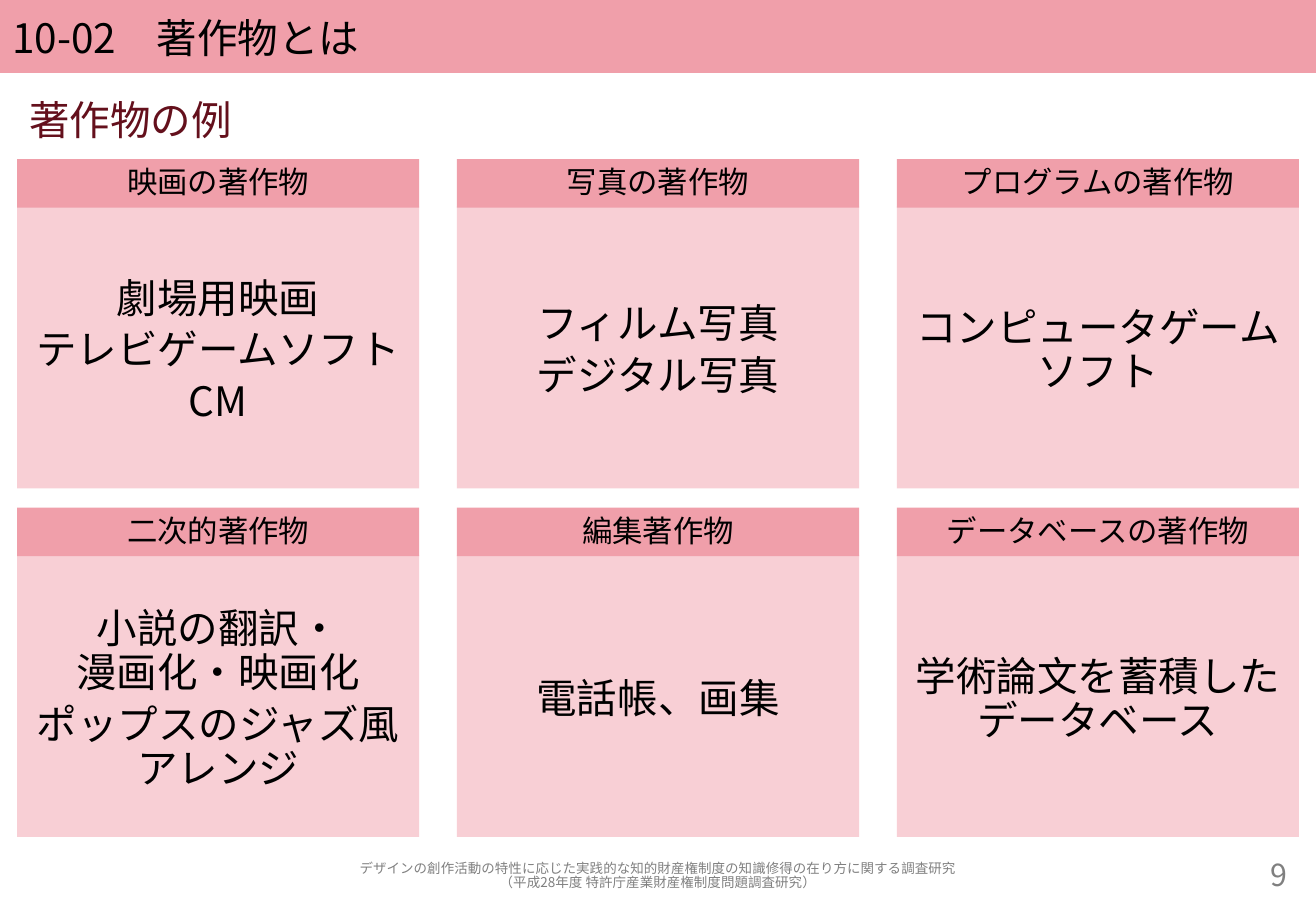
from lxml import etree
from pptx import Presentation
from pptx.dml.color import RGBColor
from pptx.enum.shapes import MSO_SHAPE
from pptx.enum.text import MSO_ANCHOR, MSO_AUTO_SIZE, PP_ALIGN
from pptx.oxml.ns import qn
from pptx.util import Inches, Pt

RECT = MSO_SHAPE.RECTANGLE
TOP, MID = MSO_ANCHOR.TOP, MSO_ANCHOR.MIDDLE
FIXED = MSO_AUTO_SIZE.NONE
LEFT, MIDST, RIGHT = PP_ALIGN.LEFT, PP_ALIGN.CENTER, PP_ALIGN.RIGHT

FONT = "Noto Sans CJK JP"
HUES = {"rose": "F09FAA", "pale": "F8CFD5", "wine": "64101C",
        "ink": "000000", "gray": "808080"}
WIDE, HIGH = 10.83, 7.5
EDGE = 0.14
SPAN = WIDE - 2 * EDGE
COLS = 3
CARD = 3.31
STEP = (SPAN - CARD) / (COLS - 1)
START, ROW = 1.31, 2.87
HEAD, BODY = 0.4, 2.32

CARDS = [
    ("映画の著作物", "劇場用映画\nテレビゲームソフト\nCM"),
    ("写真の著作物", "フィルム写真\nデジタル写真"),
    ("プログラムの著作物", "コンピュータゲームソフト"),
    ("二次的著作物", "小説の翻訳・\v漫画化・映画化\nポップスのジャズ風アレンジ"),
    ("編集著作物", "電話帳、画集"),
    ("データベースの著作物", "学術論文を蓄積したデータベース"),
]
CREDIT = ("デザインの創作活動の特性に応じた実践的な知的財産権制度の知識修得の在り方に関する調査研究\n"
          "（平成28年度 特許庁産業財産権制度問題調査研究）")


def paint(shape, hue):
    """Fill a shape with a named colour."""
    shape.fill.solid()
    shape.fill.fore_color.rgb = RGBColor.from_string(HUES[hue])


def place(shape, x, y, w, h):
    """Move and size a shape in inches."""
    shape.left, shape.top = Inches(x), Inches(y)
    shape.width, shape.height = Inches(w), Inches(h)


def write(shape, text, size, hue="ink", align=MIDST, anchor=MID, gap=0.2, inset=0.07):
    """Set the text of a shape and format its paragraphs and runs."""
    frame = shape.text_frame
    frame.text = text
    frame.word_wrap = True
    frame.auto_size = FIXED
    frame.vertical_anchor = anchor
    frame.margin_left = frame.margin_right = Inches(0.1)
    frame.margin_top, frame.margin_bottom = Inches(inset), 0
    for para in frame.paragraphs:
        para.alignment = align
        para.line_spacing = 0.9
        para.space_before = Pt(size * gap)
        for run in para.runs:
            run.font.size = Pt(size)
            run.font.name = FONT
            run.font.color.rgb = RGBColor.from_string(HUES[hue])
            east = etree.SubElement(run.font._element, qn("a:ea"))
            east.set("typeface", FONT)


def unlist(shape):
    """Remove bullets and indents from a placeholder."""
    for para in shape.text_frame.paragraphs:
        props = para._p.get_or_add_pPr()
        props.set("marL", "0")
        props.set("indent", "0")
        etree.SubElement(props, qn("a:buNone"))


def block(slide, x, y, h, hue):
    """Add a flat rectangle one card wide."""
    shape = slide.shapes.add_shape(RECT, Inches(x), Inches(y), Inches(CARD), Inches(h))
    shape.shadow.inherit = False
    shape.line.fill.background()
    paint(shape, hue)
    return shape


def card(slide, spot, head, body):
    """Add a headed card at its spot in the grid."""
    row, col = divmod(spot, COLS)
    x, y = EDGE + col * STEP, START + row * ROW
    write(block(slide, x, y + HEAD - 0.01, BODY, "pale"), body, 24)
    write(block(slide, x, y, HEAD, "rose"), head, 18, anchor=TOP)


def note(slide, x, w, text, size, align):
    """Add a gray text box in the footer row."""
    box = slide.shapes.add_textbox(Inches(x), Inches(7.06), Inches(w), Inches(0.31))
    write(box, text, size, "gray", align, gap=0, inset=0)


def main():
    """Build and save the slide."""
    deck = Presentation()
    deck.slide_width, deck.slide_height = Inches(WIDE), Inches(HIGH)
    slide = deck.slides.add_slide(deck.slide_layouts[1])

    title, lead = slide.placeholders
    place(title, 0, 0, WIDE, HIGH * 0.08)
    paint(title, "rose")
    write(title, "10-02　著作物とは", 24, align=LEFT, gap=0)
    place(lead, EDGE, 0.76, SPAN, 0.47)
    write(lead, "著作物の例", 24, "wine", LEFT, TOP)
    unlist(lead)

    for spot, (head, body) in enumerate(CARDS):
        card(slide, spot, head, body)
    note(slide, EDGE, SPAN, CREDIT, 8, MIDST)
    note(slide, WIDE - EDGE - 1.34, 1.34, "9", 18, RIGHT)
    deck.save("out.pptx")


if __name__ == "__main__":
    main()
